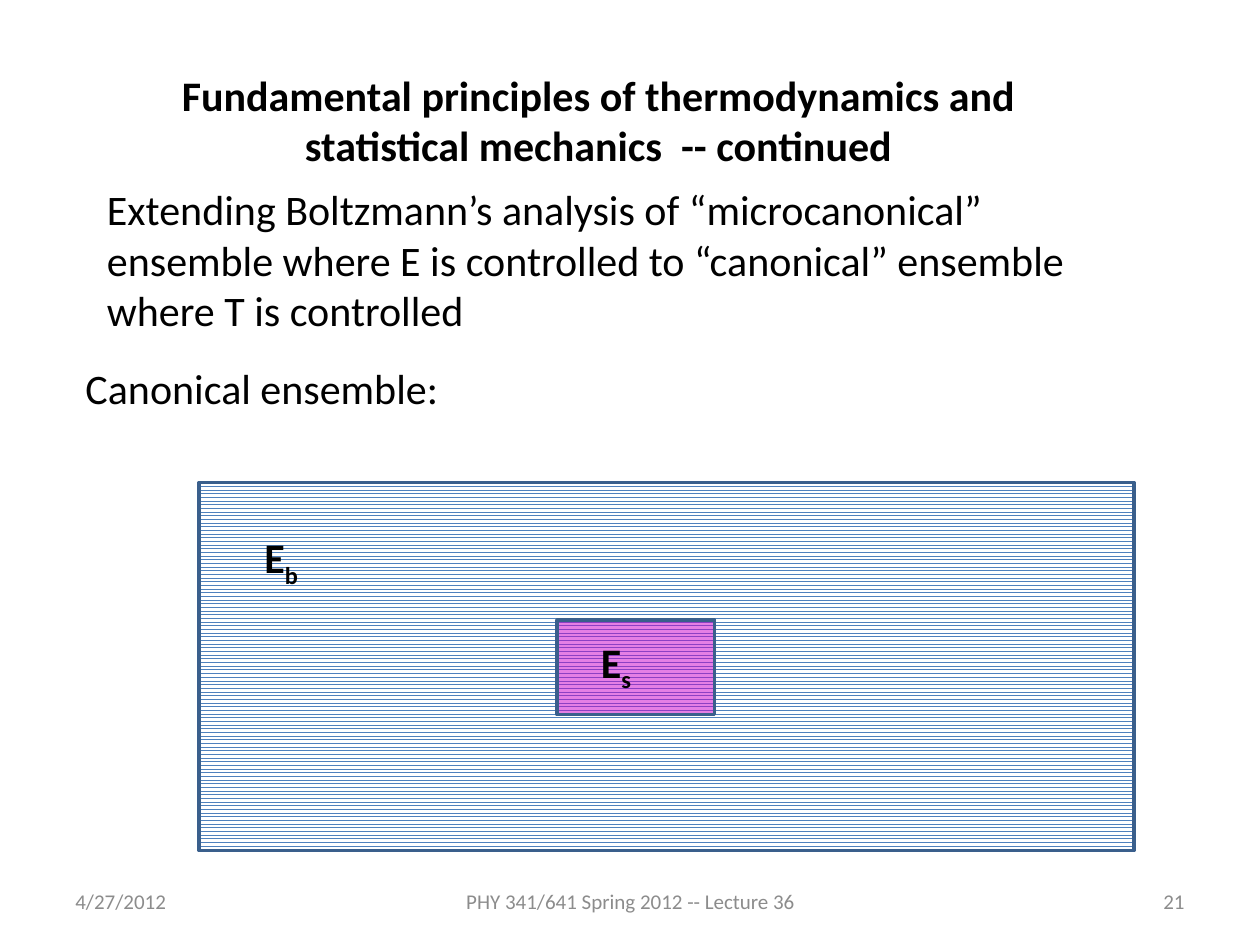
from typing import NamedTuple

from pptx import Presentation
from pptx import util as u
from pptx.dml.color import RGBColor
from pptx.enum import dml, shapes, text
from pptx.oxml import parse_xml
from pptx.oxml.ns import nsdecls

FONT = "Calibri"
BLACK, GREY, WHITE = "000000", "8C8C8C", "FFFFFF"
BLUE, OUTLINE, MAGENTA = "4F81BD", "3A5F8C", "CC00CC"
LEFT, CENTER, RIGHT = text.PP_ALIGN.LEFT, text.PP_ALIGN.CENTER, text.PP_ALIGN.RIGHT
TOP, MIDDLE = text.MSO_ANCHOR.TOP, text.MSO_ANCHOR.MIDDLE


class Box(NamedTuple):
    left: float
    top: float
    width: float
    height: float

    def lengths(self) -> list:
        return [u.Inches(side) for side in self]


class Label(NamedTuple):
    box: Box
    words: str
    subscript: str = ""
    size: int = 24
    color: str = BLACK
    bold: bool = False
    align: int = LEFT
    anchor: int = TOP


def rgb(value: str) -> RGBColor:
    return RGBColor.from_string(value)


def write(holder, label: Label) -> None:
    """Fill a text box or placeholder with the label's formatted words."""
    frame = holder.text_frame
    frame.word_wrap = True
    frame.auto_size = text.MSO_AUTO_SIZE.NONE
    frame.vertical_anchor = label.anchor
    line = frame.paragraphs[0]
    line.alignment = label.align
    line.font.name = FONT
    line.font.size = u.Pt(label.size)
    line.font.bold = label.bold
    line.font.color.rgb = rgb(label.color)
    line.add_run().text = label.words
    if label.subscript:
        lowered = line.add_run()
        lowered.text = label.subscript
        lowered.font._element.set("baseline", "-25000")


def add_label(slide, label: Label) -> None:
    write(slide.shapes.add_textbox(*label.box.lengths()), label)


def add_region(slide, box: Box):
    """Add an outlined rectangle; the caller chooses its fill."""
    region = slide.shapes.add_shape(shapes.MSO_SHAPE.RECTANGLE, *box.lengths())
    region.shadow.inherit = False
    region.line.color.rgb = rgb(OUTLINE)
    region.line.width = u.Pt(2)
    return region


def main() -> None:
    deck = Presentation()
    deck.slide_width, deck.slide_height = u.Inches(10), u.Inches(7.5)
    slide = deck.slides.add_slide(deck.slide_layouts.get_by_name("Title Only"))

    # Title
    heading = Label(
        Box(0.75, 0.5, 8, 0.91),
        "Fundamental principles of thermodynamics and statistical mechanics  -- continued",
        bold=True, align=CENTER)
    title = slide.shapes.title
    title.left, title.top, title.width, title.height = heading.box.lengths()
    write(title, heading)

    # Introductory text
    add_label(slide, Label(
        Box(0.75, 1.41, 8.25, 1.31),
        "Extending Boltzmann’s analysis of “microcanonical” ensemble where E is "
        "controlled to “canonical” ensemble where T is controlled"))
    add_label(slide, Label(Box(0.58, 2.83, 8.58, 0.5), "Canonical ensemble:"))

    # Heat bath, with the half-transparent system inside it
    bath = add_region(slide, Box(1.58, 3.83, 7.42, 2.92))
    bath.fill.patterned()
    bath.fill.pattern = dml.MSO_PATTERN.ZIG_ZAG
    bath.fill.fore_color.rgb = rgb(BLUE)
    bath.fill.back_color.rgb = rgb(WHITE)

    system = add_region(slide, Box(4.42, 4.92, 1.25, 0.75))
    system.fill.solid()
    system.fill.fore_color.rgb = rgb(MAGENTA)
    system_color = system._element.spPr.find("{*}solidFill/{*}srgbClr")
    system_color.append(parse_xml(f'<a:alpha {nsdecls("a")} val="50000"/>'))

    # Energy symbols
    add_label(slide, Label(Box(2, 4.17, 0.92, 0.5), "E", "b", bold=True))
    add_label(slide, Label(Box(4.67, 5, 0.92, 0.5), "E", "s", bold=True))

    # Footer
    for left, width, words, align in (
        (0.5, 2.33, "4/27/2012", LEFT),
        (3.42, 3.17, "PHY 341/641 Spring 2012 -- Lecture 36", CENTER),
        (7.17, 2.33, "21", RIGHT),
    ):
        add_label(slide, Label(Box(left, 6.95, width, 0.4), words, size=12,
                               color=GREY, align=align, anchor=MIDDLE))

    deck.save("out.pptx")


if __name__ == "__main__":
    main()
